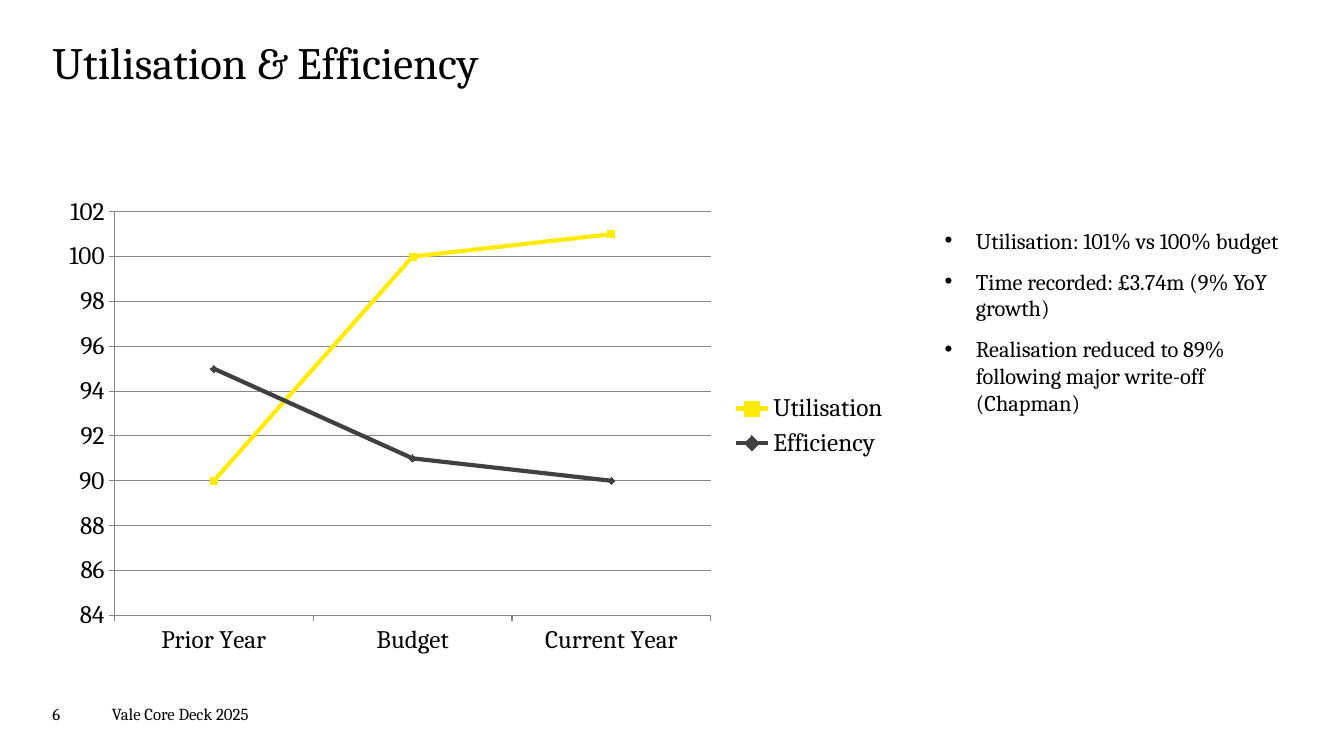
from pptx import Presentation
from pptx.chart.data import CategoryChartData
from pptx.dml.color import RGBColor
from pptx.enum.chart import XL_CHART_TYPE, XL_LEGEND_POSITION, XL_MARKER_STYLE, XL_TICK_MARK
from pptx.enum.text import MSO_ANCHOR
from pptx.util import Inches, Pt
from lxml import etree

LINE_CHART = XL_CHART_TYPE.LINE_MARKERS
LEGEND_RIGHT = XL_LEGEND_POSITION.RIGHT
SQUARE, DIAMOND = XL_MARKER_STYLE.SQUARE, XL_MARKER_STYLE.DIAMOND
TICK_OUT, TICK_NONE = XL_TICK_MARK.OUTSIDE, XL_TICK_MARK.NONE
TOP = MSO_ANCHOR.TOP
DRAWING = "{http://schemas.openxmlformats.org/drawingml/2006/main}"
FONT = "Cambria"
COLOURS = {name: RGBColor.from_string(value) for name, value in {
    "text": "000000", "grid": "878787",
    "utilisation": "FFEB00", "efficiency": "423F43"}.items()}

# Grid: shared left margin, content height and footer line
WIDTH, HEIGHT = 13.33, 7.5
MARGIN = 0.52
CONTENT_HEIGHT = 4.73
FOOTER_TOP = 6.98

deck = Presentation()
deck.slide_width, deck.slide_height = Inches(WIDTH), Inches(HEIGHT)
page = deck.slides.add_slide(deck.slide_layouts[6])


def style_font(font, size):
    for key, value in {"name": FONT, "size": Pt(size), "bold": False}.items():
        setattr(font, key, value)
    font.color.rgb = COLOURS["text"]


def add_text(place, lines, size, para_format, bullet=False):
    box = page.shapes.add_textbox(*map(Inches, place))
    frame = box.text_frame
    for key, value in {"word_wrap": True, "vertical_anchor": TOP, "margin_left": 0,
                       "margin_top": 0, "margin_right": 0, "margin_bottom": 0}.items():
        setattr(frame, key, value)
    for index, line in enumerate(lines):
        para = frame.paragraphs[0] if index == 0 else frame.add_paragraph()
        if bullet:
            props = para._p.get_or_add_pPr()
            props.set("marL", str(Inches(0.31)))
            props.set("indent", str(-Inches(0.31)))
            etree.SubElement(props, DRAWING + "buFont", typeface="Arial")
            etree.SubElement(props, DRAWING + "buChar", char="•")
        for key, value in para_format.items():
            if index or key != "space_before":
                setattr(para, key, value)
        span = para.add_run()
        span.text = line
        style_font(span.font, size)


# Title
add_text((MARGIN, 0.4, 12.28, 1.17), ["Utilisation & Efficiency"], 32, {"line_spacing": 0.9})

# Footer: deck name and page number
for left, width, label in [(1.11, 4.08, "Vale Core Deck 2025"), (MARGIN, 0.47, "6")]:
    add_text((left, FOOTER_TOP, width, 0.4), [label], 12, {"space_after": Pt(6)})

# Commentary
add_text((9.37, 2.25, 3.53, CONTENT_HEIGHT), [
    "Utilisation: 101% vs 100% budget",
    "Time recorded: £3.74m (9% YoY growth)",
    "Realisation reduced to 89% following major write-off (Chapman)",
], 16, {"space_before": Pt(10)}, bullet=True)

# Line chart
data = CategoryChartData()
data.categories = ["Prior Year", "Budget", "Current Year"]
data.add_series("Utilisation", [90, 100, 101])
data.add_series("Efficiency", [95, 91, 90])
place = map(Inches, (MARGIN, 1.86, 8.4, CONTENT_HEIGHT))
chart = page.shapes.add_chart(LINE_CHART, *place, data).chart
chart.has_title = False
chart.has_legend = True
chart.legend.position = LEGEND_RIGHT
chart.legend.include_in_layout = False
style_font(chart.font, 18)
chart.plots[0].vary_by_categories = False

# Axes and gridlines
values = chart.value_axis
for key, value in {"minimum_scale": 84, "maximum_scale": 102, "major_unit": 2,
                   "has_major_gridlines": True}.items():
    setattr(values, key, value)
for axis in (chart.category_axis, values):
    axis.major_tick_mark, axis.minor_tick_mark = TICK_OUT, TICK_NONE
for line in (chart.category_axis.format.line, values.format.line,
             values.major_gridlines.format.line):
    line.color.rgb = COLOURS["grid"]
    line.width = Pt(0.75)

# Series lines and markers
for series, marker in zip(chart.plots[0].series, (SQUARE, DIAMOND)):
    colour = COLOURS[series.name.lower()]
    series.smooth = False
    series.format.line.color.rgb = colour
    series.format.line.width = Pt(3)
    series.marker.style, series.marker.size = marker, 5
    series.marker.format.fill.solid()
    series.marker.format.fill.fore_color.rgb = colour
    series.marker.format.line.color.rgb = colour

deck.save("out.pptx")
